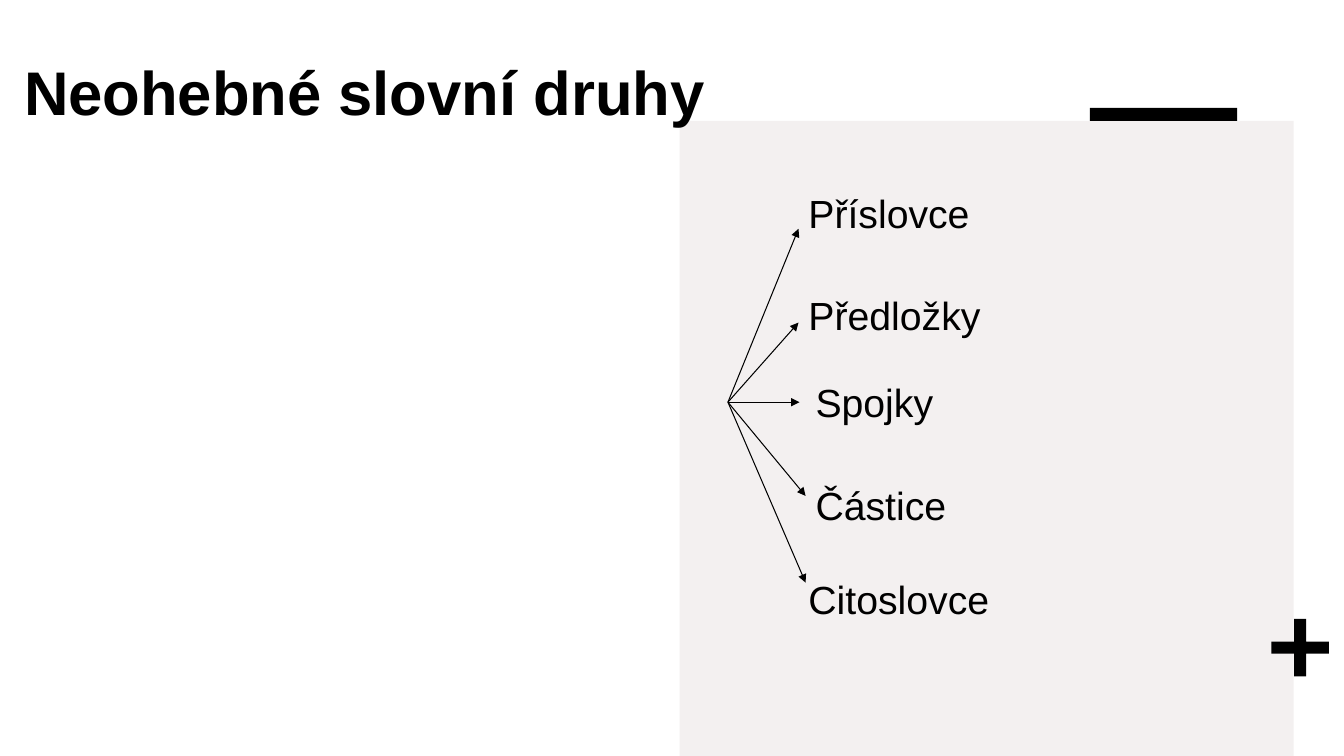
from lxml import etree
from pptx import Presentation
from pptx.dml.color import RGBColor
from pptx.enum.shapes import MSO_CONNECTOR, MSO_SHAPE
from pptx.oxml.ns import qn
from pptx.util import Inches, Pt

RECT = MSO_SHAPE.RECTANGLE
CROSS = MSO_SHAPE.CROSS
STRAIGHT = MSO_CONNECTOR.STRAIGHT
BLACK = "000000"
GREY = "F3F0F0"


def color(target, value):
    if hasattr(target, "solid"):
        target.solid()
        target = target.fore_color
    target.rgb = RGBColor.from_string(value)


def write(text, left, top, width, height, size=28, bold=False):
    box = slide.shapes.add_textbox(
        Inches(left), Inches(top), Inches(width), Inches(height))
    box.text_frame.word_wrap = True
    para = box.text_frame.paragraphs[0]
    para.line_spacing = 1.07
    run = para.add_run()
    run.text = text
    run.font.name = "Arial"
    run.font.size = Pt(size)
    run.font.bold = bold
    color(run.font.color, BLACK)


deck = Presentation()
deck.slide_width = Inches(13.33)
deck.slide_height = Inches(7.5)
slide = deck.slides.add_slide(deck.slide_layouts[6])

# Panel, plus sign and bar
for kind, left, top, width, height, fill in [
    (RECT, 6.74, 1.2, 6.09, 6.3, GREY),
    (CROSS, 12.61, 6.14, 0.57, 0.57, BLACK),
    (RECT, 10.81, 1.07, 1.46, 0.13, BLACK),
]:
    shape = slide.shapes.add_shape(
        kind, Inches(left), Inches(top), Inches(width), Inches(height))
    shape.shadow.inherit = False
    color(shape.fill, fill)
    shape.line.fill.background()
    if kind == CROSS:
        shape.adjustments[0] = 0.395

# Title
write("Neohebné slovní druhy", 0.14, 0.43, 9.04, 1.58, size=44, bold=True)

# Word classes, each with an arrow from the shared start point
for word, left, top, tip_x, tip_y in [
    ("Příslovce", 7.92, 1.8, 7.92, 2.27),
    ("Předložky", 7.92, 2.81, 7.92, 3.2),
    ("Spojky", 7.99, 3.67, 7.93, 3.99),
    ("Částice", 7.99, 4.69, 7.99, 4.92),
    ("Citoslovce", 7.92, 5.63, 7.99, 5.78),
]:
    write(word, left, top, 2.52, 0.57)
    arrow = slide.shapes.add_connector(
        STRAIGHT, Inches(7.22), Inches(3.99), Inches(tip_x), Inches(tip_y))
    color(arrow.line.fill, BLACK)
    arrow.line.width = Pt(0.75)
    props = arrow.element.spPr
    etree.SubElement(props.find(qn("a:ln")), qn("a:tailEnd"), type="triangle")
    etree.SubElement(props, qn("a:effectLst"))

deck.save("out.pptx")
